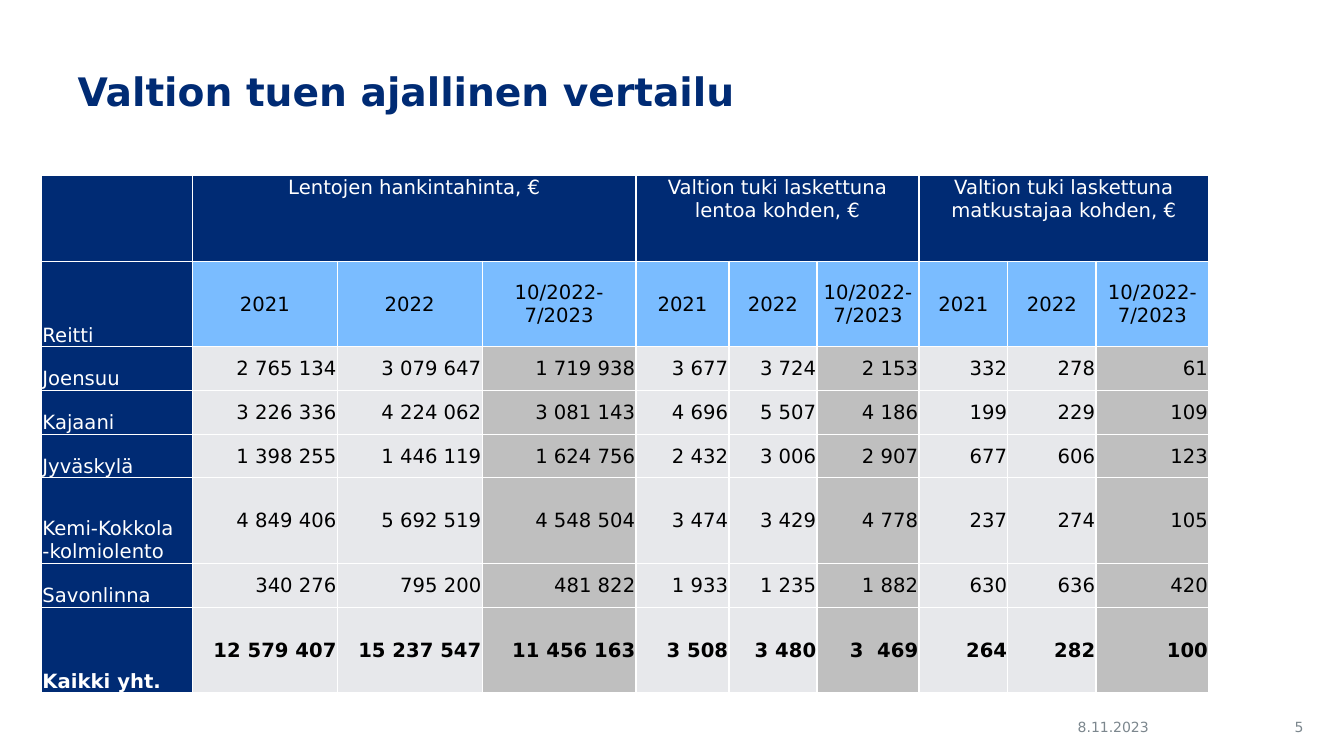
"""Build the slide that compares state aid for flight routes over time."""
import pptx
import pptx.dml.color
import pptx.enum.text
import pptx.oxml
import pptx.oxml.ns
import pptx.util

Cm = pptx.util.Cm
Align = pptx.enum.text.PP_ALIGN
Anchor = pptx.enum.text.MSO_ANCHOR
NAVY, SKY, PALE, GREY = "002B74", "7ABCFF", "E7E8EB", "BFBFBF"


def tint(code):
    return pptx.dml.color.RGBColor.from_string(code)


def style(frame, size, color, align, bold=False):
    for para in frame.paragraphs:
        para.alignment = align
        for run in para.runs:
            run.font.name = "DejaVu Sans"
            run.font.size = pptx.util.Pt(size)
            run.font.bold = bold
            run.font.color.rgb = tint(color)


deck = pptx.Presentation()
deck.slide_width, deck.slide_height = Cm(33.87), Cm(19.05)
slide = deck.slides.add_slide(deck.slide_layouts[5])

title = slide.shapes.title
title.left, title.top, title.width, title.height = Cm(1.7), Cm(1.7), Cm(29.85), Cm(3.07)
title.text_frame.text = "Valtion tuen ajallinen vertailu"
title.text_frame.vertical_anchor = Anchor.TOP
title.text_frame.paragraphs[0].line_spacing = 0.9
style(title.text_frame, 28, NAVY, Align.LEFT, True)

heads = ["Lentojen hankintahinta, €", "Valtion tuki laskettuna lentoa kohden, €",
         "Valtion tuki laskettuna matkustajaa kohden, €"]
years = ["2021", "2022", "10/2022-7/2023"]
rows = [
    [""] + [text for head in heads for text in (head, "", "")],
    ["Reitti"] + years * 3,
    ["Joensuu", "2 765 134", "3 079 647", "1 719 938",
     "3 677", "3 724", "2 153", "332", "278", "61"],
    ["Kajaani", "3 226 336", "4 224 062", "3 081 143",
     "4 696", "5 507", "4 186", "199", "229", "109"],
    ["Jyväskylä", "1 398 255", "1 446 119", "1 624 756",
     "2 432", "3 006", "2 907", "677", "606", "123"],
    ["Kemi-Kokkola -kolmiolento", "4 849 406", "5 692 519", "4 548 504",
     "3 474", "3 429", "4 778", "237", "274", "105"],
    ["Savonlinna", "340 276", "795 200", "481 822",
     "1 933", "1 235", "1 882", "630", "636", "420"],
    ["Kaikki yht.", "12 579 407", "15 237 547", "11 456 163",
     "3 508", "3 480", "3  469", "264", "282", "100"],
]
widths = [3.8, 3.65, 3.65, 3.88, 2.34, 2.22, 2.57, 2.24, 2.22, 2.84]
tall, low = 2.16, 1.1
heights = [tall, tall, low, low, low, tall, low, tall]

table = slide.shapes.add_table(len(rows), len(widths), Cm(1.05), Cm(4.42),
                               Cm(sum(widths)), Cm(sum(heights))).table
table.first_row = table.horz_banding = False
for col, width in zip(table.columns, widths):
    col.width = Cm(width)
for row, height in zip(table.rows, heights):
    row.height = Cm(height)

for i, row in enumerate(rows):
    for j, text in enumerate(row):
        cell = table.cell(i, j)
        cell.margin_left = cell.margin_right = cell.margin_top = Cm(0.02)
        cell.margin_bottom = 0
        props = cell._tc.get_or_add_tcPr()
        for side in "LRTB":
            props.append(pptx.oxml.parse_xml(
                f'<a:ln{side} {pptx.oxml.ns.nsdecls("a")} w="12700"><a:solidFill>'
                f'<a:srgbClr val="FFFFFF"/></a:solidFill></a:ln{side}>'))
        if i == 0:
            fill, ink, align, anchor = NAVY, "FFFFFF", Align.CENTER, Anchor.TOP
        elif j == 0:
            fill, ink, align, anchor = NAVY, "FFFFFF", Align.LEFT, Anchor.BOTTOM
        elif i == 1:
            fill, ink, align, anchor = SKY, "000000", Align.CENTER, Anchor.MIDDLE
        else:
            fill = GREY if j % 3 == 0 else PALE
            ink, align, anchor = "000000", Align.RIGHT, Anchor.MIDDLE
        cell.fill.solid()
        cell.fill.fore_color.rgb = tint(fill)
        cell.vertical_anchor = anchor
        if text:
            cell.text_frame.text = text
            style(cell.text_frame, 14, ink, align, i == len(rows) - 1)
for j in (1, 4, 7):
    table.cell(0, j).merge(table.cell(0, j + 2))

for text, left, width, align in [("8.11.2023", 25.45, 5.21, Align.CENTER),
                                 ("5", 31.4, 1.7, Align.RIGHT)]:
    frame = slide.shapes.add_textbox(Cm(left), Cm(17.96), Cm(width), Cm(0.71)).text_frame
    frame.word_wrap = True
    frame.vertical_anchor = Anchor.MIDDLE
    frame.text = text
    style(frame, 10, "7C878E", align)

deck.save("out.pptx")
